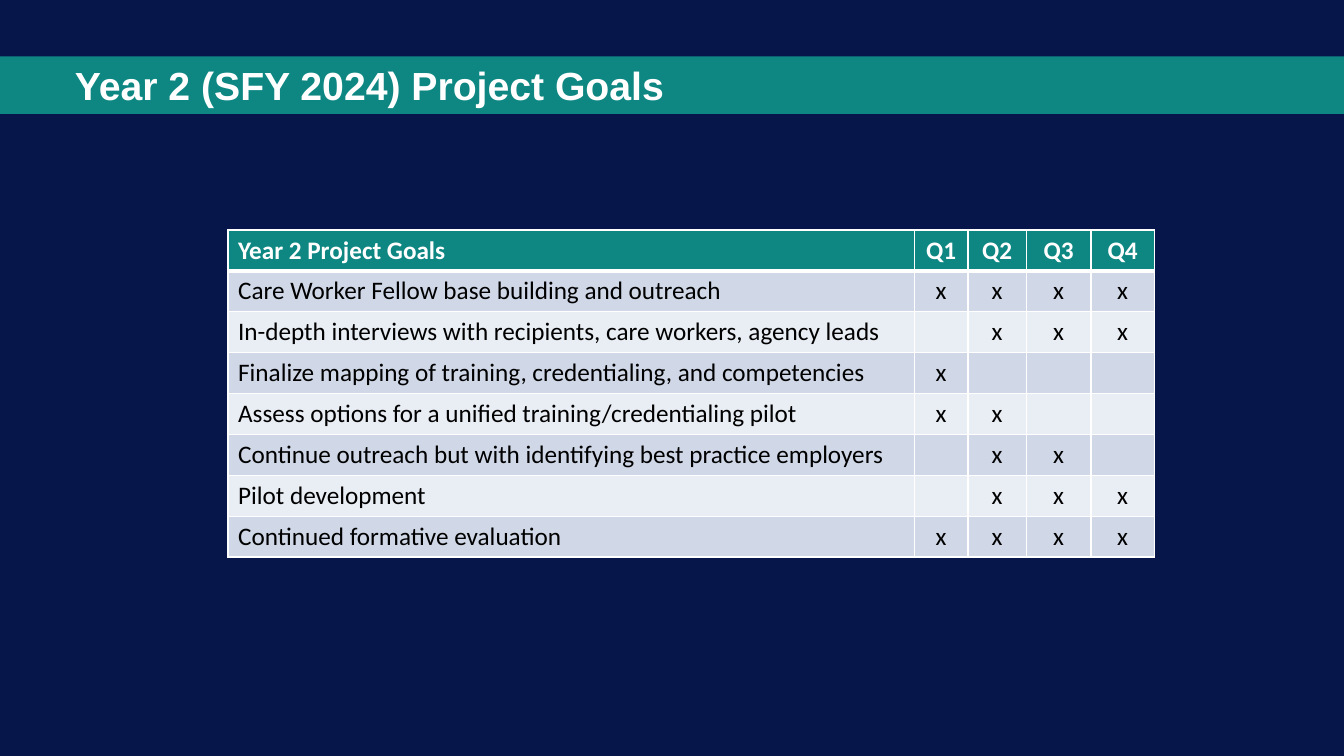
import dataclasses

import lxml.etree
import pptx
import pptx.dml.color
import pptx.enum.text
import pptx.oxml.ns
import pptx.util

Pt = pptx.util.Pt
Align = pptx.enum.text.PP_ALIGN
Anchor = pptx.enum.text.MSO_ANCHOR


@dataclasses.dataclass(frozen=True)
class Theme:
    navy: str = "06154A"
    teal: str = "0E8783"
    white: str = "FFFFFF"
    black: str = "000000"
    bands: tuple = ("D0D8E8", "E9EDF4")
    head: str = "Arial"
    body: str = "Calibri"
    large: int = 28
    small: int = 18


THEME = Theme()
WIDTH, HEIGHT = 960, 540
QUARTERS = ("Q1", "Q2", "Q3", "Q4")
COLS = (490.3, 38.2, 41.8, 46.1, 45.4)
ROW = 29.2
GOALS = (
    ("Care Worker Fellow base building and outreach", (1, 2, 3, 4)),
    ("In-depth interviews with recipients, care workers, agency leads", (2, 3, 4)),
    ("Finalize mapping of training, credentialing, and competencies", (1,)),
    ("Assess options for a unified training/credentialing pilot", (1, 2)),
    ("Continue outreach but with identifying best practice employers", (2, 3)),
    ("Pilot development", (2, 3, 4)),
    ("Continued formative evaluation", (1, 2, 3, 4)),
)


def paint(fill, color):
    fill.solid()
    fill.fore_color.rgb = pptx.dml.color.RGBColor.from_string(color)


def write(para, text, face, size, color, bold):
    run = para.add_run()
    run.text = text
    run.font.name = face
    run.font.size = Pt(size)
    run.font.bold = bold
    run.font.color.rgb = pptx.dml.color.RGBColor.from_string(color)


def add_title(slide, text):
    """Turn the title placeholder into the full-width band."""
    title = slide.shapes.title
    title.left, title.top = Pt(0), Pt(40.3)
    title.width, title.height = Pt(WIDTH), Pt(41)
    paint(title.fill, THEME.teal)
    frame = title.text_frame
    frame.margin_left = Pt(53.5)
    frame.margin_top = frame.margin_bottom = Pt(3.6)
    frame.vertical_anchor = Anchor.MIDDLE
    para = frame.paragraphs[0]
    para.alignment = Align.LEFT
    write(para, text, THEME.head, THEME.large, THEME.white, True)


def edge(cell, top, base):
    """Draw the four cell borders, with top and base widths in points."""
    props = cell._tc.get_or_add_tcPr()
    qn = pptx.oxml.ns.qn
    sides = (("lnL", 1), ("lnR", 1), ("lnT", top), ("lnB", base))
    for spot, (side, width) in enumerate(sides):
        line = lxml.etree.Element(qn("a:" + side), w=str(int(Pt(width))))
        fill = lxml.etree.SubElement(line, qn("a:solidFill"))
        lxml.etree.SubElement(fill, qn("a:srgbClr"), val=THEME.white)
        props.insert(spot, line)


def add_goals(slide):
    rows = [("Year 2 Project Goals", *QUARTERS)]
    for goal, active in GOALS:
        marks = ["x" if q in active else "" for q in range(1, len(QUARTERS) + 1)]
        rows.append((goal, *marks))
    table = slide.shapes.add_table(
        len(rows), len(COLS), Pt(162.9), Pt(164.3),
        Pt(sum(COLS)), Pt(ROW * len(rows))).table
    table.horz_banding = False
    for col, width in zip(table.columns, COLS):
        col.width = Pt(width)
    for r, texts in enumerate(rows):
        head = r == 0
        table.rows[r].height = Pt(ROW)
        for c, text in enumerate(texts):
            cell = table.cell(r, c)
            paint(cell.fill, THEME.teal if head else THEME.bands[(r - 1) % 2])
            edge(cell, 3 if r == 1 else 1, 3 if head else 1)
            para = cell.text_frame.paragraphs[0]
            para.alignment = Align.CENTER if c else Align.LEFT
            if text:
                color = THEME.white if head else THEME.black
                write(para, text, THEME.body, THEME.small, color, head)


def main():
    deck = pptx.Presentation()
    deck.slide_width, deck.slide_height = Pt(WIDTH), Pt(HEIGHT)
    slide = deck.slides.add_slide(deck.slide_layouts[5])
    paint(slide.background.fill, THEME.navy)
    add_goals(slide)
    add_title(slide, "Year 2 (SFY 2024) Project Goals")
    deck.save("out.pptx")


if __name__ == "__main__":
    main()
